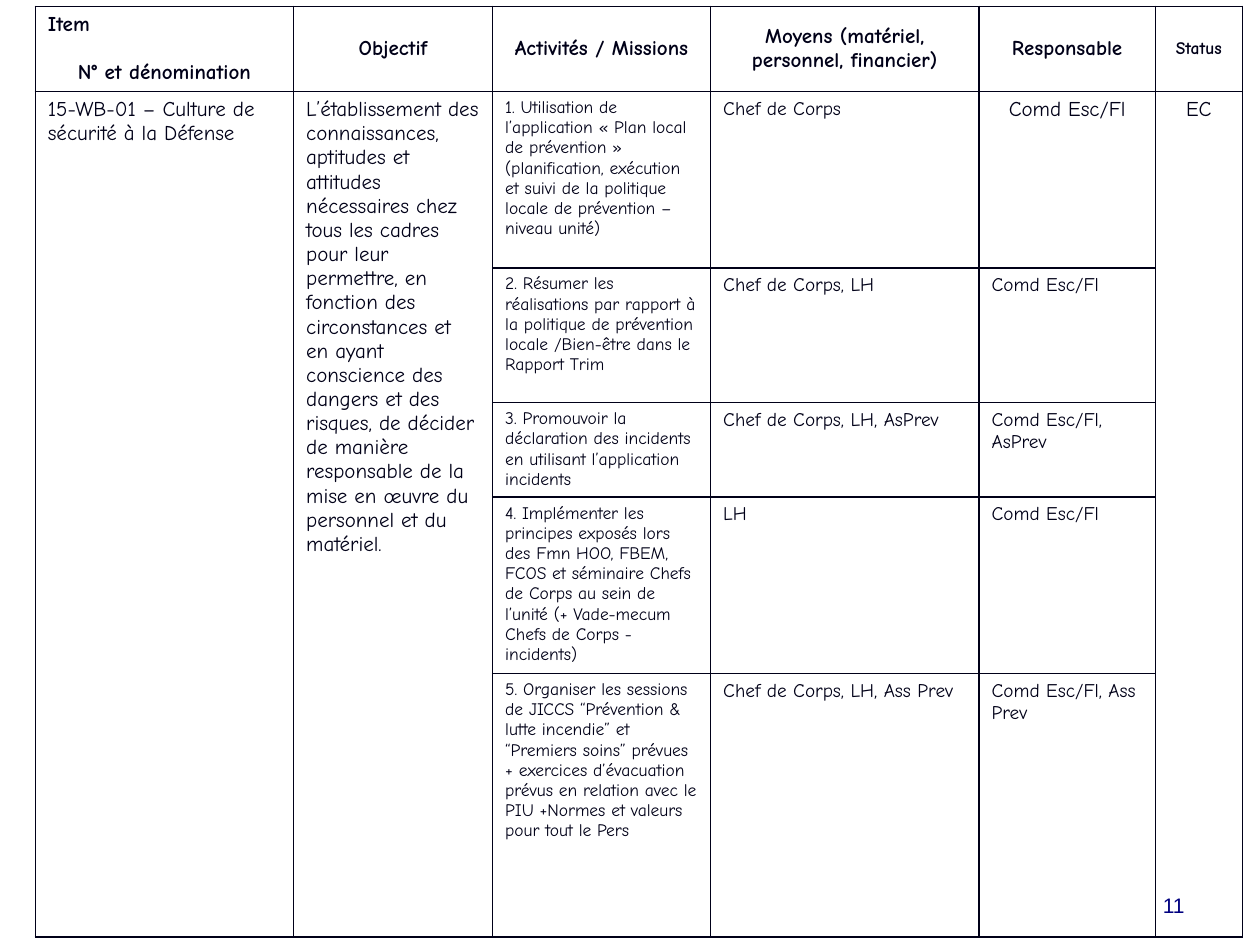
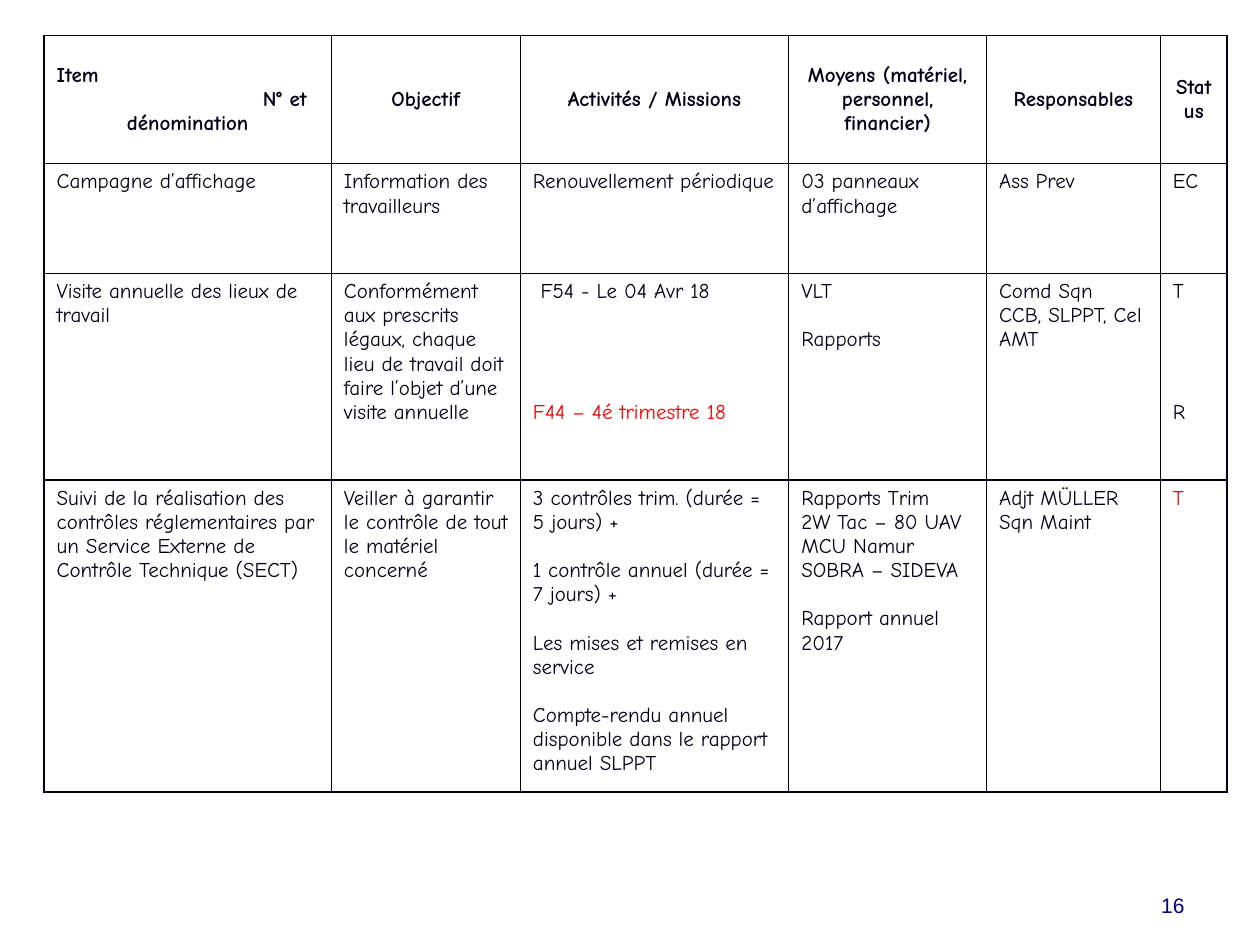
from dataclasses import dataclass

from lxml import etree
from pptx import Presentation
from pptx import util as u
from pptx.dml.color import RGBColor
from pptx.enum import text
from pptx.oxml import ns

COLORS = {"ink": "000018", "alert": "FF0000", "number": "000080"}
TABLE_FONT, NUMBER_FONT = "Comic Neue", "Arial"
LEFT, CENTER, RIGHT = text.PP_ALIGN.LEFT, text.PP_ALIGN.CENTER, text.PP_ALIGN.RIGHT
LINE = 13.8  # height of a 12 pt text line, in points

# The slide is a grid of 1000 columns by 750 rows.
UNIT = u.Inches(10) // 1000
NUMBER_BOX = (717, 683, 233, 50)


@dataclass
class Para:
    text: str
    gap: float = 0  # empty lines above
    color: str = "ink"
    align: int = LEFT
    size: float = 0  # 0 keeps the size of the column
    indent: int = 0  # first line, in grid columns


def grid(*counts):
    return [u.Emu(n * UNIT) for n in counts]


def style(p, font, size, color, align, bold=False):
    p.alignment = align
    p.font.name = font
    p.font.size = u.Pt(size)
    p.font.bold = bold
    p.font.color.rgb = RGBColor.from_string(COLORS[color])


def border(cell):
    tc_pr = cell._tc.get_or_add_tcPr()
    for side in ("lnL", "lnR", "lnT", "lnB"):
        ln = etree.SubElement(tc_pr, ns.qn(f"a:{side}"), w=str(u.Pt(1)))
        fill = etree.SubElement(ln, ns.qn("a:solidFill"))
        etree.SubElement(fill, ns.qn("a:srgbClr"), val=COLORS["ink"])


def fill_cell(cell, content, size, header):
    """Write a string, a Para or a list of them into a bordered cell."""
    border(cell)
    cell.fill.background()
    cell.vertical_anchor = text.MSO_ANCHOR.MIDDLE if header else text.MSO_ANCHOR.TOP
    if content is None:
        return
    items = content if isinstance(content, list) else [content]
    tf = cell.text_frame
    for i, item in enumerate(items):
        if isinstance(item, str):
            item = Para(item, align=CENTER if header else LEFT)
        p = tf.paragraphs[0] if i == 0 else tf.add_paragraph()
        p.text = item.text
        if item.gap:
            p.space_before = u.Pt(item.gap * LINE)
        if item.indent:
            p._p.get_or_add_pPr().set("indent", str(item.indent * UNIT))
        style(p, TABLE_FONT, item.size or size, item.color, item.align, header)


def plan_table(s, left, top, widths, heights, rows, sizes):
    """Draw the action plan; None continues the cell above."""
    box = grid(left, top, sum(widths), sum(heights))
    table = s.shapes.add_table(len(rows), len(widths), *box).table
    table.first_row = table.horz_banding = False
    for col, width in zip(table.columns, grid(*widths)):
        col.width = width
    for row, height in zip(table.rows, grid(*heights)):
        row.height = height
    for r, row in enumerate(rows):
        for c, content in enumerate(row):
            fill_cell(table.cell(r, c), content, 12 if r == 0 else sizes[c], r == 0)
    for c in range(len(widths)):
        if rows[-1][c] is None:
            table.cell(1, c).merge(table.cell(len(rows) - 1, c))


def slide_number(s, number):
    tf = s.shapes.add_textbox(*grid(*NUMBER_BOX)).text_frame
    tf.word_wrap = True
    tf.vertical_anchor = text.MSO_ANCHOR.BOTTOM
    p = tf.paragraphs[0]
    p.text = number
    style(p, NUMBER_FONT, 12, "number", RIGHT)


def plan_slide(prs, number, **plan):
    s = prs.slides.add_slide(prs.slide_layouts[6])
    plan_table(s, **plan)
    slide_number(s, number)


def header(responsible, status, **item_number):
    return [
        [Para("Item"), Para("N° et dénomination", align=CENTER, **item_number)],
        "Objectif",
        "Activités / Missions",
        "Moyens (matériel, personnel, financier)",
        responsible,
        status,
    ]


SAFETY_CULTURE = dict(
    left=28, top=5,
    widths=[205, 158, 173, 213, 140, 69],
    heights=[67, 140, 107, 75, 140, 209],
    sizes=[12, 12, 10, 11, 11, 12],
    rows=[
        header("Responsable", Para("Status", align=CENTER, size=10), gap=1),
        [
            "15-WB-01 – Culture de sécurité à la Défense",
            "L’établissement des connaissances, aptitudes et attitudes nécessaires chez "
            "tous les cadres pour leur permettre, en fonction des circonstances et en "
            "ayant conscience des dangers et des risques, de décider de manière "
            "responsable de la mise en œuvre du personnel et du matériel.",
            "1. Utilisation de l’application « Plan local de prévention » (planification, "
            "exécution et suivi de la politique locale de prévention – niveau unité)",
            "Chef de Corps",
            Para("Comd Esc/Fl", align=CENTER, size=12),
            Para("EC", align=CENTER),
        ],
        [
            None, None,
            "2. Résumer les réalisations par rapport à la politique de prévention locale "
            "/Bien-être dans le Rapport Trim",
            "Chef de Corps, LH", "Comd Esc/Fl", None,
        ],
        [
            None, None,
            "3. Promouvoir la déclaration des incidents en utilisant l’application incidents",
            "Chef de Corps, LH, AsPrev", "Comd Esc/Fl, AsPrev", None,
        ],
        [
            None, None,
            "4. Implémenter les principes exposés lors des Fmn HOO, FBEM, FCOS et séminaire "
            "Chefs de Corps au sein de l’unité (+ Vade-mecum Chefs de Corps - incidents)",
            "LH", "Comd Esc/Fl", None,
        ],
        [
            None, None,
            "5. Organiser les sessions de JICCS “Prévention & lutte incendie” et “Premiers "
            "soins” prévues + exercices d’évacuation prévus en relation avec le PIU "
            "+Normes et valeurs pour tout le Pers",
            "Chef de Corps, LH, Ass Prev", "Comd Esc/Fl, Ass Prev", None,
        ],
    ],
)

INSPECTIONS = dict(
    left=35, top=28,
    widths=[228, 150, 213, 157, 138, 53],
    heights=[102, 87, 164, 240],
    sizes=[12] * 6,
    rows=[
        header("Responsables", "Status", indent=154),
        [
            "Campagne d’affichage",
            "Information des travailleurs",
            "Renouvellement périodique",
            "03 panneaux d’affichage",
            "Ass Prev",
            "EC",
        ],
        [
            "Visite annuelle des lieux de travail",
            "Conformément aux prescrits légaux, chaque lieu de travail doit faire l’objet "
            "d’une visite annuelle",
            [
                Para("F54 - Le 04 Avr 18", indent=6),
                Para("F44 – 4é trimestre 18", gap=4, color="alert"),
            ],
            ["VLT", Para("Rapports", gap=1)],
            ["Comd Sqn", "CCB, SLPPT, Cel AMT"],
            ["T", Para("R", gap=4)],
        ],
        [
            "Suivi de la réalisation des contrôles réglementaires par un Service Externe de "
            "Contrôle Technique (SECT)",
            "Veiller à garantir le contrôle de tout le matériel concerné",
            [
                "3 contrôles trim. (durée = 5 jours) +",
                Para("1 contrôle annuel (durée = 7 jours) +", gap=1),
                Para("Les mises et remises en service", gap=1),
                Para("Compte-rendu annuel disponible dans le rapport annuel SLPPT", gap=1),
            ],
            [
                "Rapports Trim",
                "2W Tac – 80 UAV MCU Namur",
                "SOBRA – SIDEVA",
                Para("Rapport annuel 2017", gap=1),
            ],
            ["Adjt MÜLLER", "Sqn Maint"],
            Para("T", color="alert"),
        ],
    ],
)


def main():
    prs = Presentation()
    prs.slide_width, prs.slide_height = grid(1000, 750)
    plan_slide(prs, "11", **SAFETY_CULTURE)
    plan_slide(prs, "16", **INSPECTIONS)
    prs.save("out.pptx")


if __name__ == "__main__":
    main()
